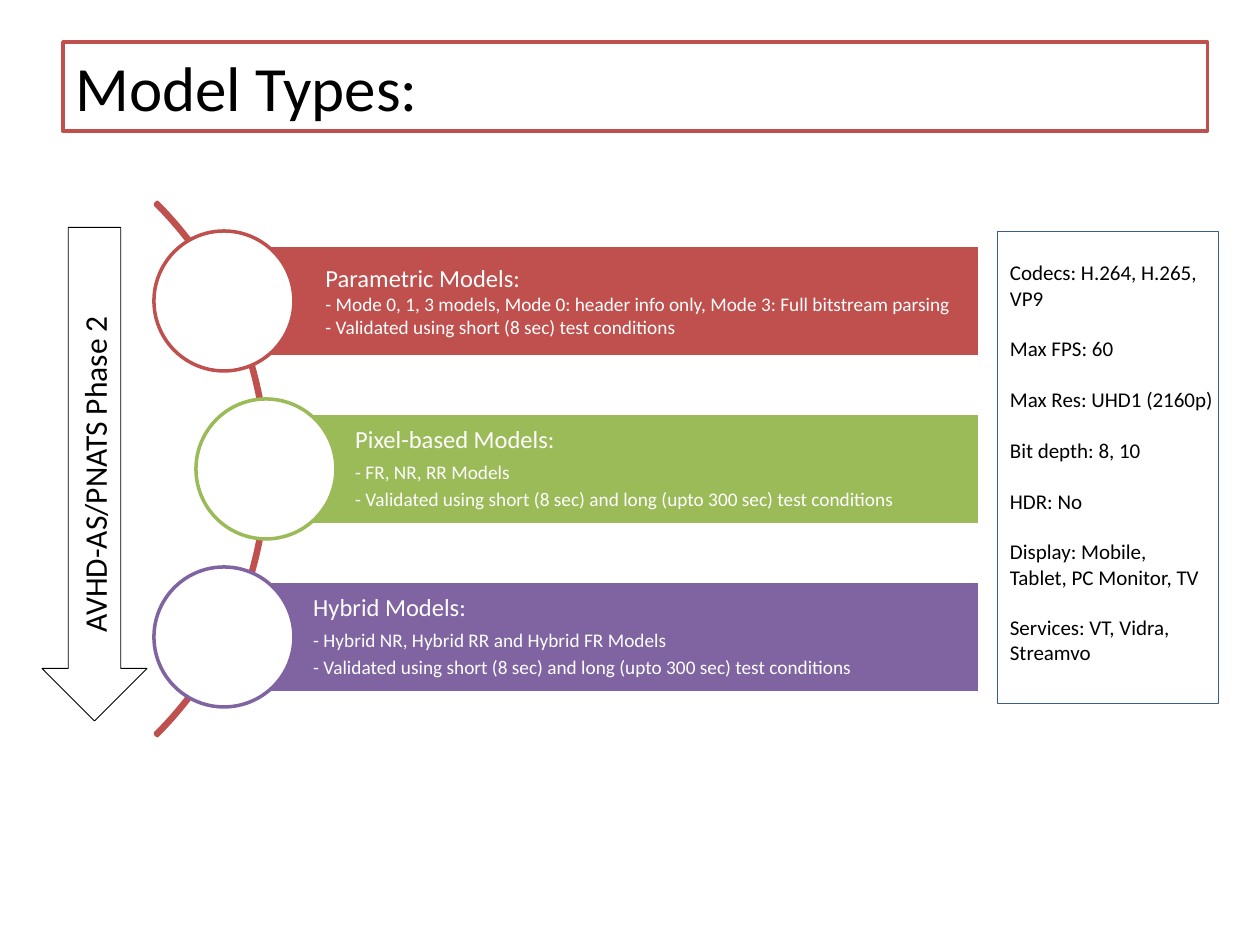
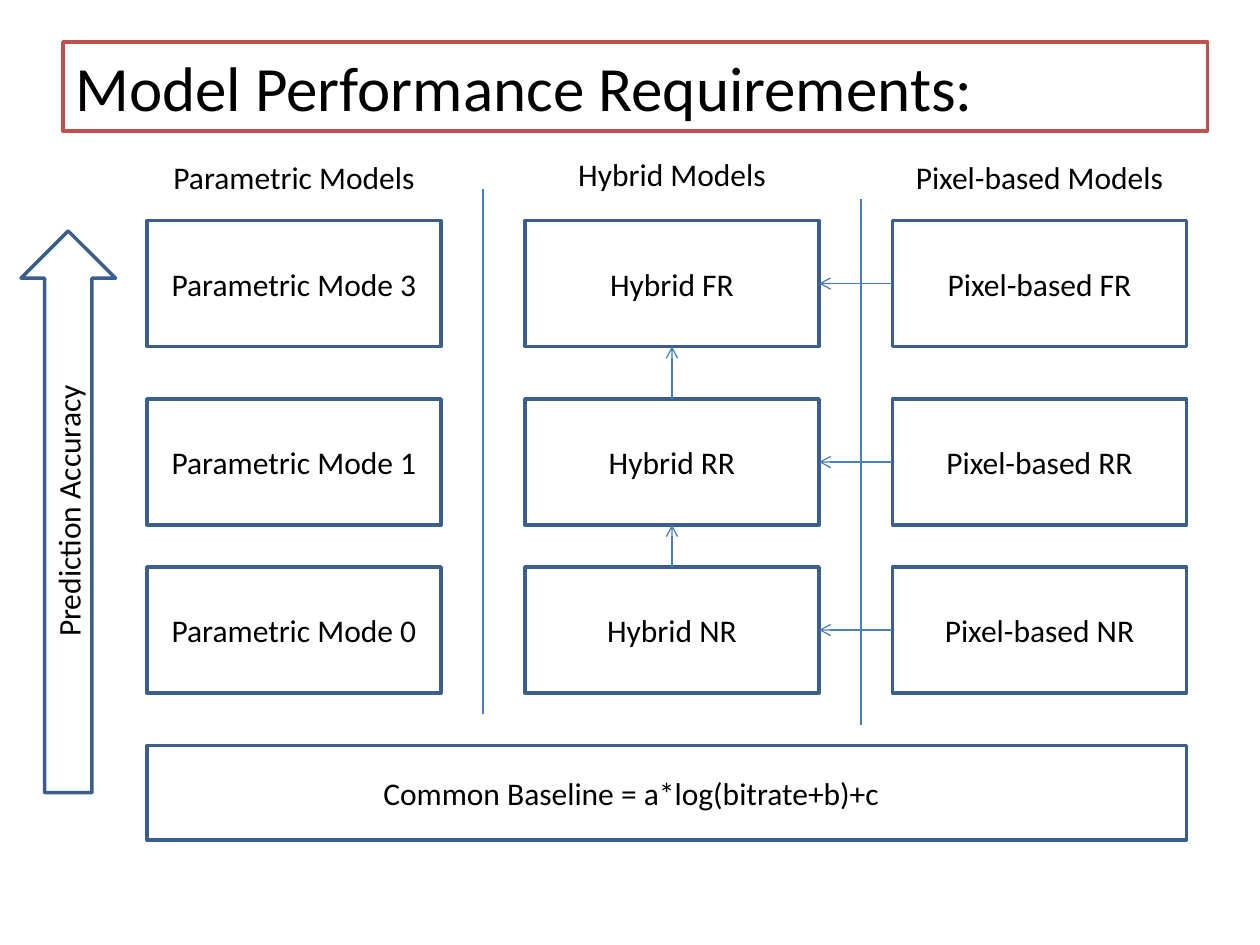
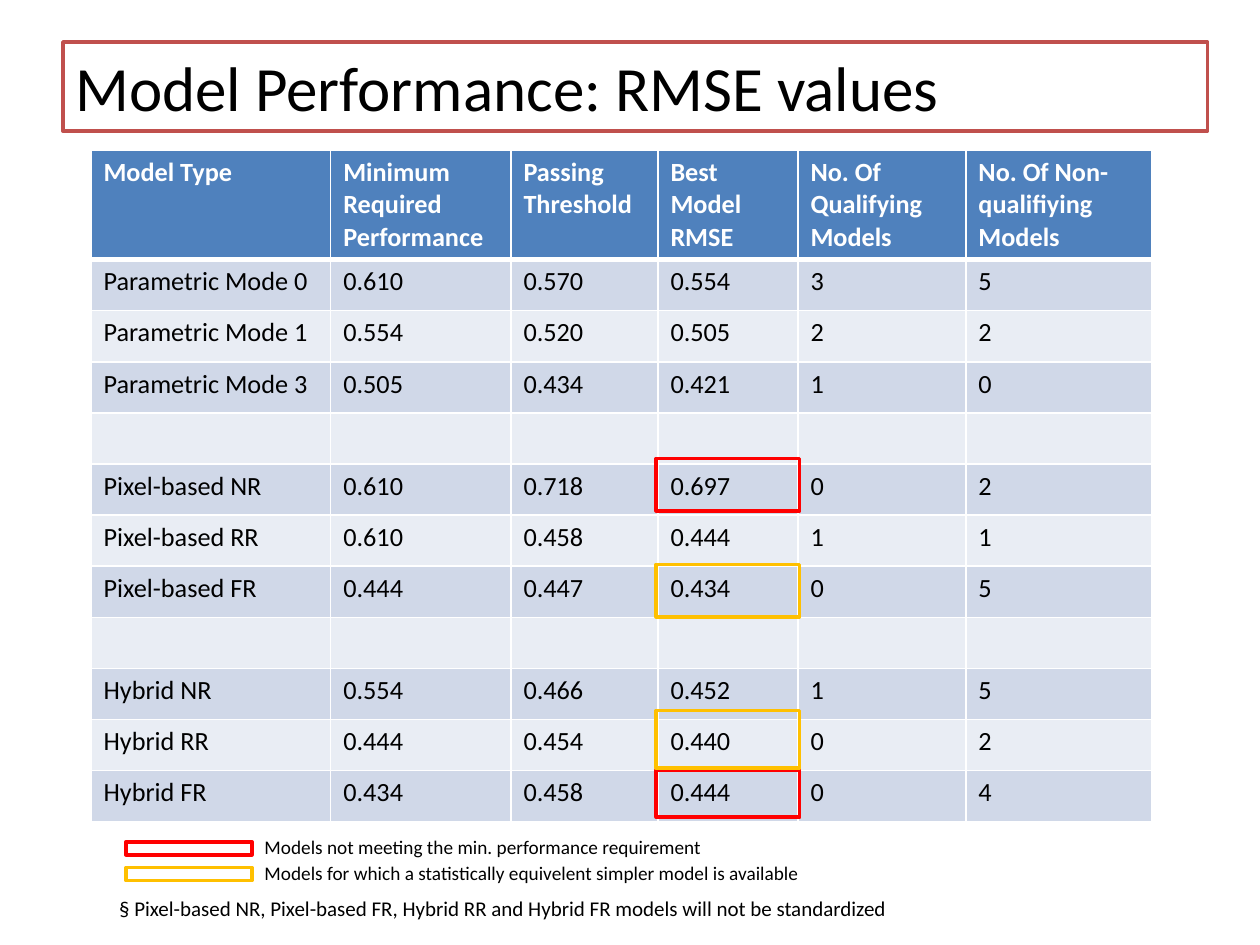
from dataclasses import dataclass
from typing import NamedTuple

from lxml import etree
from pptx import Presentation
from pptx.dml.color import RGBColor
from pptx.enum.shapes import MSO_CONNECTOR, MSO_SHAPE
from pptx.enum.text import MSO_ANCHOR, PP_ALIGN
from pptx.oxml.ns import qn
from pptx.util import Pt

RECTANGLE, ELLIPSE, ARC = MSO_SHAPE.RECTANGLE, MSO_SHAPE.OVAL, MSO_SHAPE.BLOCK_ARC
UP_ARROW, DOWN_ARROW = MSO_SHAPE.UP_ARROW, MSO_SHAPE.DOWN_ARROW
STRAIGHT = MSO_CONNECTOR.STRAIGHT
TOP, MIDDLE = MSO_ANCHOR.TOP, MSO_ANCHOR.MIDDLE
LEFT, CENTER = PP_ALIGN.LEFT, PP_ALIGN.CENTER
SIDE_TOP, SIDE_LEFT, SIDE_BOTTOM, SIDE_RIGHT = range(4)
BLANK_LAYOUT = 6


@dataclass(frozen=True)
class Theme:
    font: str = "Calibri"
    black: str = "000000"
    white: str = "FFFFFF"
    red: str = "C0504D"
    green: str = "9BBB59"
    purple: str = "8064A2"
    outline: str = "3A5F8C"
    connector: str = "4B7EBC"
    header: str = "4F81BD"
    bands: tuple = ("D0D8E8", "E9EDF4")
    failing: str = "FF0000"
    redundant: str = "FFC000"
    title: float = 36
    label: float = 18
    cell: float = 15
    heading: float = 14
    note: float = 12
    detail: float = 11
    thick: float = 2
    thin: float = 0.75


THEME = Theme()


class Box(NamedTuple):
    left: float
    top: float
    width: float
    height: float

    def points(self):
        return [Pt(value) for value in self]


TITLE_BOX = Box(36, 24, 654, 51)


# Shared parts
def colour(code):
    return RGBColor.from_string(code)


def add_outline(page, kind, box, line, fill=None, weight=THEME.thick):
    shape = page.shapes.add_shape(kind, *box.points())
    shape.shadow.inherit = False
    if fill:
        shape.fill.solid()
        shape.fill.fore_color.rgb = colour(fill)
    else:
        shape.fill.background()
    shape.line.color.rgb = colour(line)
    shape.line.width = Pt(weight)
    return shape


def format_para(para, size, code=THEME.black, align=LEFT, bold=False):
    para.alignment = align
    for span in para.runs:
        span.font.name = THEME.font
        span.font.size = Pt(size)
        span.font.bold = bold
        span.font.color.rgb = colour(code)


def write(shape, text, size, code=THEME.black, align=LEFT, anchor=MIDDLE,
          insets=(7.2, 3.6, 7.2, 3.6)):
    frame = shape.text_frame
    frame.word_wrap = True
    frame.vertical_anchor = anchor
    (frame.margin_left, frame.margin_top,
     frame.margin_right, frame.margin_bottom) = [Pt(inset) for inset in insets]
    frame.text = text
    for para in frame.paragraphs:
        format_para(para, size, code, align)
    return frame.paragraphs


def add_label(page, box, text, size, align=LEFT):
    label = page.shapes.add_textbox(*box.points())
    write(label, text, size, align=align, anchor=TOP)
    return label


def add_upward_label(page, text, center_x, center_y, length, height=29):
    box = Box(center_x - length / 2, center_y - height / 2, length, height)
    add_label(page, box, text, THEME.label, CENTER).rotation = 270


def add_line(page, start=(0, 0), end=(0, 0)):
    line = page.shapes.add_connector(STRAIGHT, *[Pt(v) for v in (*start, *end)])
    line.line.color.rgb = colour(THEME.connector)
    line.line.width = Pt(THEME.thin)
    etree.SubElement(line._element.spPr, qn("a:effectLst"))
    return line


def add_arrow(page, source, source_side, target, target_side):
    arrow = add_line(page)
    arrow.begin_connect(source, source_side)
    arrow.end_connect(target, target_side)
    etree.SubElement(arrow.line._get_or_add_ln(), qn("a:tailEnd"), type="arrow")


def add_page(deck, title):
    page = deck.slides.add_slide(deck.slide_layouts[BLANK_LAYOUT])
    band = add_outline(page, RECTANGLE, TITLE_BOX, THEME.red, THEME.white)
    write(band, title, THEME.title, anchor=TOP)
    return page


# Model types
MODEL_BARS = [
    # indent of the bar, colour, text inset, line spacing, gaps after, text
    (0, THEME.red, 58, 1, (0, 0),
     "Parametric Models:\n"
     "- Mode 0, 1, 3 models, Mode 0: header info only, Mode 3: Full bitstream parsing\n"
     "- Validated using short (8 sec) test conditions"),
    (24, THEME.green, 51, 0.9, (5, 3.5),
     "Pixel-based Models:\n- FR, NR, RR Models\n"
     "- Validated using short (8 sec) and long (upto 300 sec) test conditions"),
    (0, THEME.purple, 51, 0.9, (5, 3.5),
     "Hybrid Models:\n- Hybrid NR, Hybrid RR and Hybrid FR Models\n"
     "- Validated using short (8 sec) and long (upto 300 sec) test conditions"),
]
TEST_SCOPE = [
    "Codecs: H.264, H.265,\vVP9", "Max FPS: 60", "Max Res: UHD1 (2160p)",
    "Bit depth: 8, 10", "HDR: No", "Display: Mobile,\vTablet, PC Monitor, TV",
    "Services: VT, Vidra,\vStreamvo",
]


def draw_model_bars(page, box):
    # Arc behind the bars, centred on their middle
    size, bar_height, circle = 431, 64, 80
    arc_box = Box(box.left - 406, box.top + box.height / 2 - size / 2, size, size)
    arc = add_outline(page, ARC, arc_box, THEME.red)
    for index, value in enumerate((189, 27, 0.004)):
        arc.adjustments[index] = value

    pitch = (box.height - bar_height) / (len(MODEL_BARS) - 1)
    for row, (indent, code, inset, spacing, gaps, text) in enumerate(MODEL_BARS):
        left, top = box.left + indent, box.top + row * pitch
        bar_box = Box(left, top, box.width - indent, bar_height)
        bar = add_outline(page, RECTANGLE, bar_box, THEME.white, code)
        paras = write(bar, text, THEME.detail, THEME.white, insets=(inset, 3, 3, 3))
        format_para(paras[0], THEME.heading, THEME.white)
        for index, para in enumerate(paras):
            para.line_spacing = spacing
            para.space_after = Pt(gaps[min(index, 1)])
        circle_box = Box(left - circle / 2, top + (bar_height - circle) / 2, circle, circle)
        add_outline(page, ELLIPSE, circle_box, code, THEME.white)


def draw_test_scope(page, box):
    panel = add_outline(page, RECTANGLE, box, THEME.outline, weight=0.25)
    paras = write(panel, "\n".join(TEST_SCOPE), THEME.note, anchor=TOP,
                  insets=(7.2, 16.5, 0, 0))
    for para in paras[1:]:
        para.space_before = Pt(14.6)


def draw_model_types(deck):
    page = add_page(deck, "Model Types:")
    draw_model_bars(page, Box(128, 140, 432, 256))
    add_outline(page, DOWN_ARROW, Box(24, 130, 60, 282), THEME.black, weight=0.5)
    add_upward_label(page, "AVHD-AS/PNATS Phase 2", 54, 271, 200)
    draw_test_scope(page, Box(570, 132, 126, 270))


# Performance requirements
MODEL_COLUMNS = [
    # offset, heading offset, heading, models from top to bottom
    (0, -39, "Parametric Models",
     ("Parametric Mode 3", "Parametric Mode 1", "Parametric Mode 0")),
    (216, -41, "Hybrid Models", ("Hybrid FR", "Hybrid RR", "Hybrid NR")),
    (426, -39, "Pixel-based Models",
     ("Pixel-based FR", "Pixel-based RR", "Pixel-based NR")),
]
ROW_OFFSETS = (0, 102, 198)


def draw_model_grid(page, box):
    cell_width, cell_height = 168, 72
    columns = []
    for offset, heading_offset, heading, models in MODEL_COLUMNS:
        left = box.left + offset
        heading_box = Box(left, box.top + heading_offset, cell_width, 29)
        add_label(page, heading_box, heading, THEME.label, CENTER)
        cells = []
        for row_offset, model in zip(ROW_OFFSETS, models):
            cell_box = Box(left, box.top + row_offset, cell_width, cell_height)
            cell = add_outline(page, RECTANGLE, cell_box, THEME.outline)
            write(cell, model, THEME.label, align=CENTER)
            cells.append(cell)
        columns.append(cells)

    # Column dividers
    for x, y in ((192, -18), (408, -12)):
        add_line(page, (box.left + x, box.top + y), (box.left + x, box.top + y + 300))

    # Pixel-based models feed hybrid ones, which improve upwards
    _, hybrids, pixels = columns
    for pixel, hybrid in zip(pixels, hybrids):
        add_arrow(page, pixel, SIDE_LEFT, hybrid, SIDE_RIGHT)
    for upper, lower in zip(hybrids, hybrids[1:]):
        add_arrow(page, lower, SIDE_TOP, upper, SIDE_BOTTOM)

    # Baseline under all columns
    baseline_box = Box(box.left, box.top + 300, box.width, 54)
    baseline = add_outline(page, RECTANGLE, baseline_box, THEME.outline)
    write(baseline, "Common Baseline = a*log(bitrate+b)+c", THEME.label,
          insets=(135, 3.6, 7.2, 3.6))


def draw_requirements(deck):
    page = add_page(deck, "Model Performance Requirements:")
    draw_model_grid(page, Box(84, 126, 594, 354))
    add_outline(page, UP_ARROW, Box(12, 132, 54, 321), THEME.outline)
    add_upward_label(page, "Prediction Accuracy", 39, 292, 170)


# RMSE values
COLUMN_WIDTHS = (137, 103, 84, 80, 96, 106)
HEADER_HEIGHT, ROW_HEIGHT = 61, 29.2
RMSE_ROWS = [
    ("Model Type", "Minimum Required\nPerformance", "Passing\nThreshold",
     "Best\nModel RMSE", "No. Of Qualifying Models", "No. Of Non-qualifiying Models"),
    ("Parametric Mode 0", "0.610", "0.570", "0.554", "3", "5"),
    ("Parametric Mode 1", "0.554", "0.520", "0.505", "2", "2"),
    ("Parametric Mode 3", "0.505", "0.434", "0.421", "1", "0"),
    ("",) * 6,
    ("Pixel-based NR", "0.610", "0.718", "0.697", "0", "2"),
    ("Pixel-based RR", "0.610", "0.458", "0.444", "1", "1"),
    ("Pixel-based FR", "0.444", "0.447", "0.434", "0", "5"),
    ("",) * 6,
    ("Hybrid NR", "0.554", "0.466", "0.452", "1", "5"),
    ("Hybrid RR", "0.444", "0.454", "0.440", "0", "2"),
    ("Hybrid FR", "0.434", "0.458", "0.444", "0", "4"),
]
HIGHLIGHTS = [
    # offset from the table top, height, colour
    (176, 30, THEME.failing), (354, 27, THEME.failing),
    (236.5, 30, THEME.redundant), (320, 33, THEME.redundant),
]
LEGEND = [
    (THEME.failing, "Models not meeting the min. performance requirement"),
    (THEME.redundant,
     "Models for which a statistically equivelent simpler model is available"),
]


def set_borders(cell, top, bottom):
    properties = cell._tc.get_or_add_tcPr()
    for side, weight in (("L", 1), ("R", 1), ("T", top), ("B", bottom)):
        border = etree.SubElement(properties, qn(f"a:ln{side}"), w=str(Pt(weight)))
        fill = etree.SubElement(border, qn("a:solidFill"))
        etree.SubElement(fill, qn("a:srgbClr"), val=THEME.white)


def draw_rmse_table(page, box):
    frame = page.shapes.add_table(len(RMSE_ROWS), len(COLUMN_WIDTHS), *box.points())
    table = frame.table
    for column, width in zip(table.columns, COLUMN_WIDTHS):
        column.width = Pt(width)
    for row, values in enumerate(RMSE_ROWS):
        is_header = row == 0
        table.rows[row].height = Pt(HEADER_HEIGHT if is_header else ROW_HEIGHT)
        for column, value in enumerate(values):
            cell = table.cell(row, column)
            set_borders(cell, 3 if row == 1 else 1, 3 if is_header else 1)
            cell.fill.solid()
            fill = THEME.header if is_header else THEME.bands[(row - 1) % 2]
            cell.fill.fore_color.rgb = colour(fill)
            cell.text_frame.text = value
            for para in cell.text_frame.paragraphs:
                format_para(para, THEME.cell, THEME.white if is_header else THEME.black,
                            bold=is_header)

    # Frames around the best RMSE of models that fall short
    for offset, height, code in HIGHLIGHTS:
        highlight = Box(box.left + 323, box.top + offset, 82, height)
        add_outline(page, RECTANGLE, highlight, code)


def draw_legend(page, box):
    for row, (code, text) in enumerate(LEGEND):
        top = box.top + row * 14.75
        add_outline(page, RECTANGLE, Box(box.left, top + 7, 72, 7.5), code)
        add_label(page, Box(box.left + 72, top, box.width - 72, 21), text, THEME.detail)
    add_label(page, Box(box.left - 11, box.top + 34, box.width, 22),
              "§ Pixel-based NR, Pixel-based FR, Hybrid RR and Hybrid FR models "
              "will not be standardized", THEME.note)


def draw_rmse_values(deck):
    page = add_page(deck, "Model Performance: RMSE values")
    table_height = HEADER_HEIGHT + ROW_HEIGHT * (len(RMSE_ROWS) - 1)
    draw_rmse_table(page, Box(52, 86, sum(COLUMN_WIDTHS), table_height))
    draw_legend(page, Box(72, 474, 500, 56))


def main():
    deck = Presentation()
    deck.slide_width, deck.slide_height = Pt(720), Pt(540)
    draw_model_types(deck)
    draw_requirements(deck)
    draw_rmse_values(deck)
    deck.save("out.pptx")


if __name__ == "__main__":
    main()
